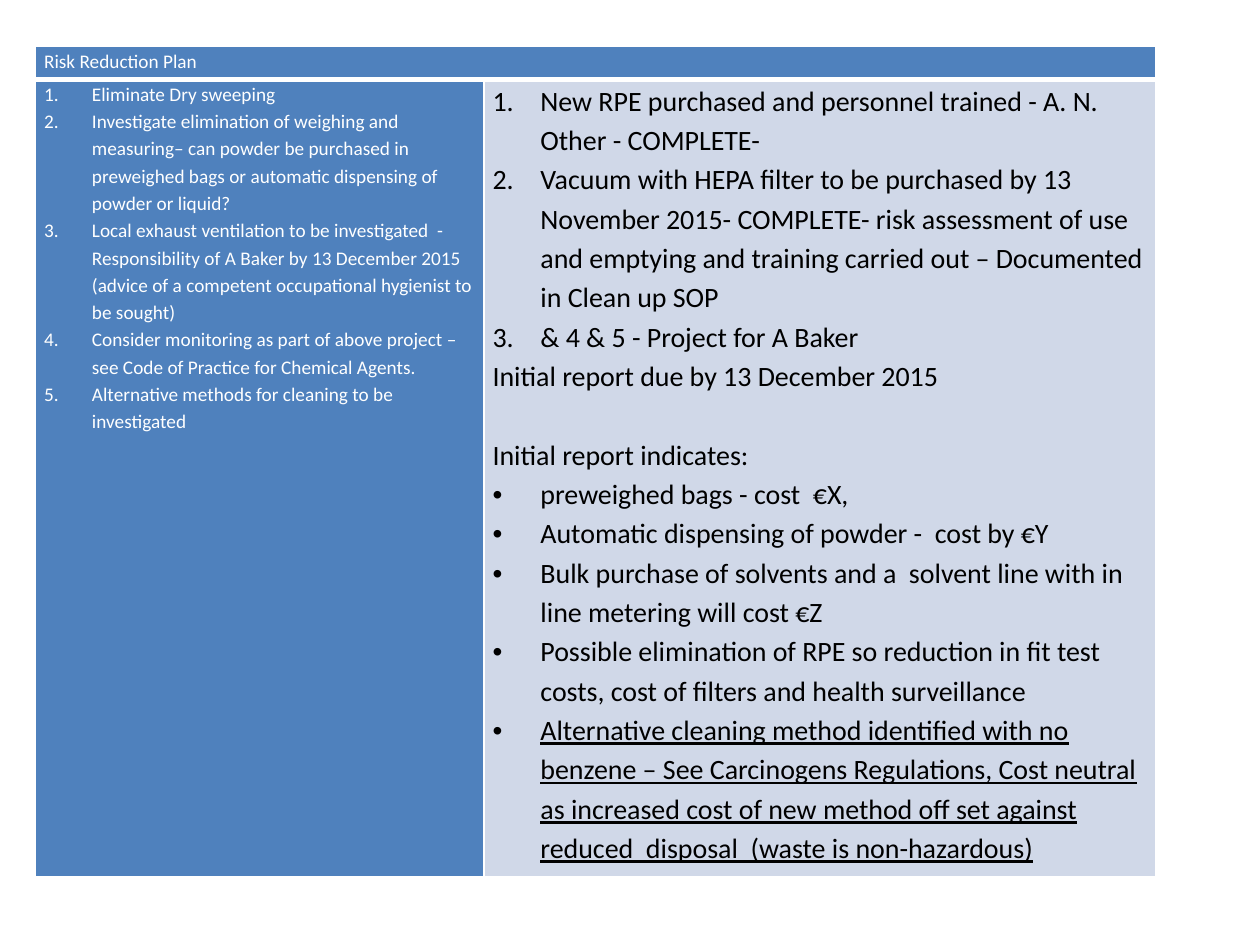
"""Build the risk reduction plan slide."""
from dataclasses import dataclass

from lxml import etree
from pptx import Presentation
from pptx import util as u
from pptx.dml.color import RGBColor
from pptx.oxml import ns


@dataclass(frozen=True)
class Theme:
    """Colours, font and type sizes of the slide."""
    font: str = "Calibri"
    blue: str = "4F81BD"
    pale: str = "D0D8E8"
    white: str = "FFFFFF"
    black: str = "000000"
    small: int = 11
    large: int = 16
    spacing: float = 1.15
    hang: float = 0.38
    inset: float = 0.07


ACTIONS = [
    "Eliminate Dry sweeping",
    "Investigate elimination of weighing and measuring– can powder be purchased in "
    "preweighed bags or automatic dispensing of powder or liquid?",
    "Local exhaust ventilation to be investigated  - Responsibility of A Baker by "
    "13 December 2015 (advice of a competent occupational hygienist to be sought)",
    "Consider monitoring as part of above project – see Code of Practice for "
    "Chemical Agents.",
    "Alternative methods for cleaning to be investigated",
]
PROGRESS = [
    "New RPE purchased and personnel trained - A. N. Other - COMPLETE-",
    "Vacuum with HEPA filter to be purchased by 13 November 2015- COMPLETE- risk "
    "assessment of use and emptying and training carried out – Documented in Clean up SOP",
    "& 4 & 5 - Project for A Baker",
]
FINDINGS = [
    "preweighed bags - cost  €X,",
    "Automatic dispensing of powder -  cost by €Y",
    "Bulk purchase of solvents and a  solvent line with in line metering will cost €Z",
    "Possible elimination of RPE so reduction in fit test costs, cost of filters and "
    "health surveillance",
]
CLEANING = (
    "Alternative cleaning method identified with no benzene – See Carcinogens "
    "Regulations, Cost neutral as increased cost of new method off set against "
    "reduced  disposal  (waste is non-hazardous)"
)


def write(frame, content, *, theme, size, color, marker=None, underline=False, before=0):
    """Add one paragraph, filling the empty first one when there is one."""
    first = frame.paragraphs[0]
    paragraph = frame.add_paragraph() if first.runs else first
    if marker:
        props = paragraph._p.get_or_add_pPr()
        hang = u.Inches(theme.hang)
        props.set("marL", str(hang))
        props.set("indent", str(-hang))
        if marker == "number":
            etree.SubElement(props, ns.qn("a:buFont"), typeface="+mj-lt")
            etree.SubElement(props, ns.qn("a:buAutoNum"), type="arabicPeriod")
        else:
            etree.SubElement(props, ns.qn("a:buFont"), typeface="Arial")
            etree.SubElement(props, ns.qn("a:buChar"), char=marker)
    paragraph.line_spacing = theme.spacing
    if before:
        paragraph.space_before = u.Pt(before)
    run = paragraph.add_run()
    run.text = content
    run.font.name = theme.font
    run.font.size = u.Pt(size)
    run.font.bold = False
    run.font.underline = underline
    run.font.color.rgb = RGBColor.from_string(color)


class PlanSlide:
    """Holds the theme and the current slide."""

    def __init__(self, deck, theme):
        """Start on a blank slide."""
        self.theme = theme
        self.slide = deck.slides.add_slide(deck.slide_layouts[6])

    def table(self, left, top, widths, heights):
        """Add an unbanded table with the given columns and rows."""
        box = [u.Inches(v) for v in (left, top, sum(widths), sum(heights))]
        grid = self.slide.shapes.add_table(len(heights), len(widths), *box).table
        grid.horz_banding = False
        for column, width in zip(grid.columns, widths):
            column.width = u.Inches(width)
        for row, height in zip(grid.rows, heights):
            row.height = u.Inches(height)
        return grid

    def cell(self, cell, fill, bottom=1):
        """Fill and border a cell and return its text frame."""
        cell.margin_left = cell.margin_right = u.Inches(self.theme.inset)
        cell.margin_top = cell.margin_bottom = 0
        cell.fill.solid()
        cell.fill.fore_color.rgb = RGBColor.from_string(fill)
        props = cell._tc.get_or_add_tcPr()
        for place, (side, width) in enumerate(zip("LRTB", (1, 1, 1, bottom))):
            line = etree.Element(ns.qn(f"a:ln{side}"), w=str(u.Pt(width)))
            solid = etree.SubElement(line, ns.qn("a:solidFill"))
            etree.SubElement(solid, ns.qn("a:srgbClr"), val=self.theme.white)
            props.insert(place, line)
        return cell.text_frame


def main():
    """Build and save the slide."""
    deck = Presentation()
    deck.slide_width, deck.slide_height = u.Inches(10), u.Inches(7.5)
    theme = Theme()
    page = PlanSlide(deck, theme)
    plan = page.table(0.28, 0.37, (3.56, 5.33), (0.26, 6.33))
    plan.cell(0, 0).merge(plan.cell(0, 1))

    light = dict(theme=theme, size=theme.small, color=theme.white)
    dark = dict(theme=theme, size=theme.large, color=theme.black)

    heading = page.cell(plan.cell(0, 0), theme.blue, bottom=3)
    write(heading, "Risk Reduction Plan", **light)

    actions = page.cell(plan.cell(1, 0), theme.blue)
    for action in ACTIONS:
        write(actions, action, marker="number", **light)

    progress = page.cell(plan.cell(1, 1), theme.pale)
    for step in PROGRESS:
        write(progress, step, marker="number", **dark)
    write(progress, "Initial report due by 13 December 2015", **dark)
    write(progress, "Initial report indicates:", before=22.5, **dark)
    for finding in FINDINGS:
        write(progress, finding, marker="•", **dark)
    write(progress, CLEANING, marker="•", underline=True, **dark)

    deck.save("out.pptx")


if __name__ == "__main__":
    main()
